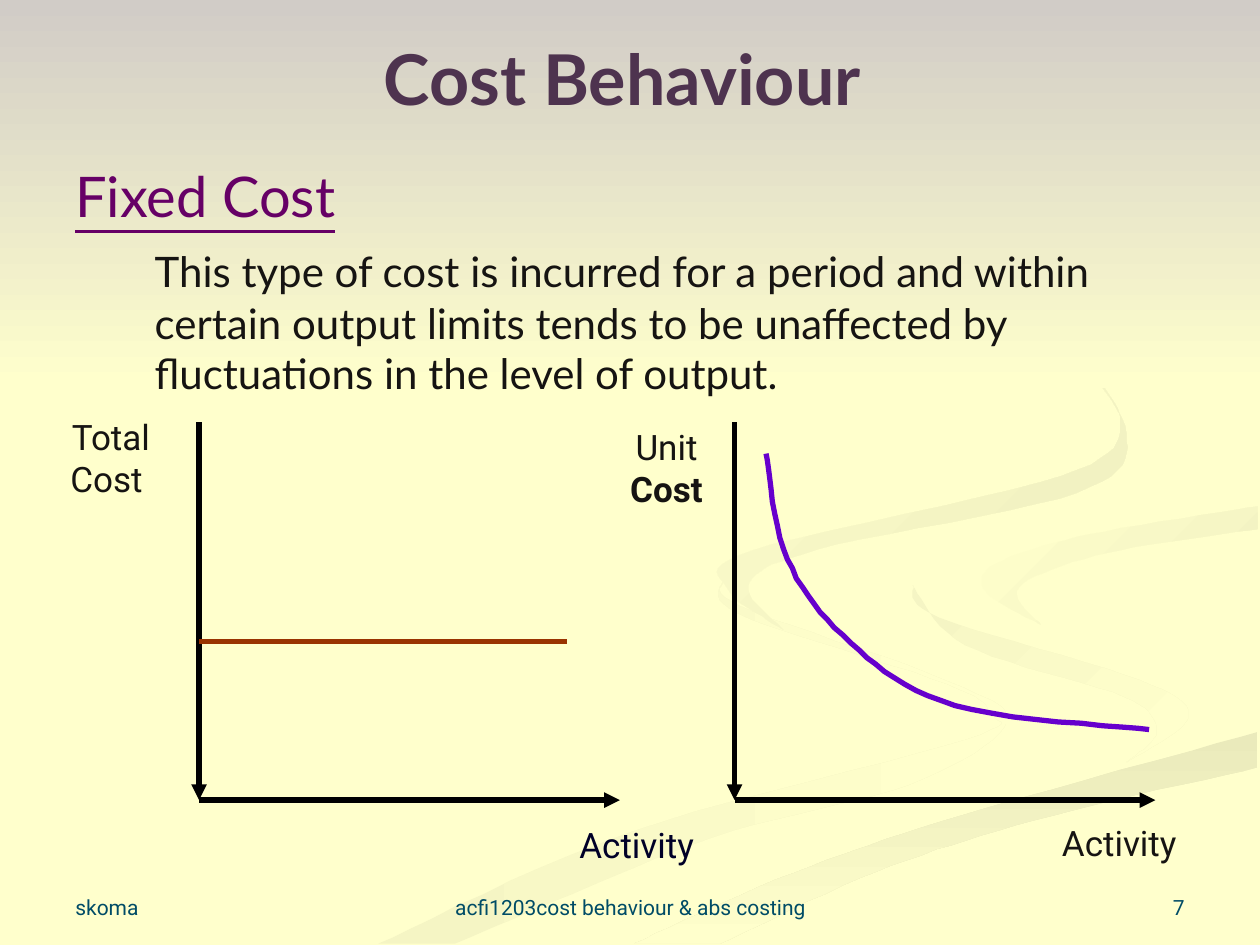
from pptx import Presentation
from pptx.dml.color import RGBColor
from pptx.enum.shapes import MSO_CONNECTOR, MSO_SHAPE
from pptx.enum.text import MSO_ANCHOR, PP_ALIGN
from pptx.oxml.xmlchemy import OxmlElement
from pptx.util import Pt

SCALE = 9144
STRAIGHT = MSO_CONNECTOR.STRAIGHT
RECTANGLE = MSO_SHAPE.RECTANGLE
LEFT, CENTER, RIGHT = PP_ALIGN.LEFT, PP_ALIGN.CENTER, PP_ALIGN.RIGHT
TOP, MIDDLE, BOTTOM = MSO_ANCHOR.TOP, MSO_ANCHOR.MIDDLE, MSO_ANCHOR.BOTTOM

CREAM = RGBColor(0xFF, 0xFF, 0xCC)
GREY = RGBColor(0xD1, 0xCC, 0xC7)
SAND = RGBColor(0xF5, 0xF5, 0xC4)
DARK_SAND = RGBColor(0xEA, 0xEA, 0xBB)
PALE_SAND = RGBColor(0xF1, 0xF1, 0xC1)
MID_SAND = RGBColor(0xED, 0xED, 0xBE)
PLUM = RGBColor(0x4E, 0x33, 0x4F)
PURPLE = RGBColor(0x66, 0x00, 0x66)
INK = RGBColor(0x16, 0x14, 0x12)
NAVY = RGBColor(0x00, 0x00, 0x28)
TEAL = RGBColor(0x00, 0x4C, 0x66)
BLACK = RGBColor(0x00, 0x00, 0x00)
BROWN = RGBColor(0x99, 0x33, 0x00)
VIOLET = RGBColor(0x66, 0x00, 0xCC)

TITLE = {"name": "Lato", "size": Pt(40), "bold": True}
HEADING = {"name": "Lato", "size": Pt(32), "underline": True}
TAB = {"name": "Lato", "size": Pt(28)}
BODY = {"name": "Lato", "size": Pt(24)}
LABEL = {"name": "Roboto", "size": Pt(20)}
BOLD_LABEL = {**LABEL, "bold": True}
FOOTER = {"name": "Roboto", "size": Pt(12)}

RIBBONS = [
    (CREAM, SAND, 0,
     [(300, 749), (499, 661), (767, 587), (785, 566), (752, 543), (586, 487), (575, 459)],
     [(575, 459), (587, 481), (745, 538), (799, 573), (721, 623), (564, 665), (361, 749)]),
    (CREAM, SAND, 45,
     [(724, 464), (745, 490), (905, 540), (943, 570), (894, 605)],
     [(894, 605), (918, 581), (892, 553), (766, 512), (724, 464)]),
    (DARK_SAND, CREAM, 90,
     [(503, 749), (630, 693), (764, 647), (998, 581)],
     [(998, 609), (821, 651), (695, 692), (571, 749)]),
    (PALE_SAND, CREAM, 45,
     [(826, 496), (782, 469), (791, 447), (865, 424), (998, 402)],
     [(998, 420), (878, 439), (809, 466), (826, 496)]),
    (MID_SAND, CREAM, 45,
     [(762, 233), (843, 275), (894, 344), (855, 391), (649, 436), (594, 465), (622, 500)],
     [(622, 500), (578, 468), (597, 437), (842, 378), (889, 335), (846, 279), (762, 233)]),
]
UNIT_COST_CURVE = [(25, 25), (42, 109), (92, 175), (175, 225), (329, 244)]


def px(*lengths):
    """Turn px lengths into whole EMU."""
    return [round(length * SCALE) for length in lengths]


def add_runs(paragraph, runs):
    """Append (text, format, colour) runs to a paragraph."""
    for text, font_format, colour in runs:
        run = paragraph.add_run()
        run.text = text
        for name, value in font_format.items():
            setattr(run.font, name, value)
        run.font.color.rgb = colour


def add_text(slide, box, runs, alignment=LEFT, anchor=TOP):
    """Place a wrapped text box and return its text frame."""
    frame = slide.shapes.add_textbox(*px(*box)).text_frame
    frame.word_wrap = True
    frame.vertical_anchor = anchor
    frame.paragraphs[0].alignment = alignment
    add_runs(frame.paragraphs[0], runs)
    return frame


def add_line(slide, start, end, colour, arrow=False):
    """Draw a straight line, with an arrowhead at its end if asked."""
    connector = slide.shapes.add_connector(STRAIGHT, *px(*start, *end))
    connector.line.color.rgb = colour
    connector.line.width = Pt(3)
    if arrow:
        head = OxmlElement("a:tailEnd")
        head.set("type", "triangle")
        connector.line._get_or_add_ln().append(head)
    connector._element.spPr.append(OxmlElement("a:effectLst"))


def smooth(knots, steps=10):
    """Return points on a smooth curve through the knots."""
    padded = [knots[0], *knots, knots[-1]]
    points = [knots[0]]
    for before, start, end, after in zip(padded, padded[1:], padded[2:], padded[3:]):
        for step in range(1, steps + 1):
            t = step / steps
            points.append(tuple(
                b + ((c - a) * t + (2 * a - 5 * b + 4 * c - d) * t ** 2
                     + (3 * b - a - 3 * c + d) * t ** 3) / 2
                for a, b, c, d in zip(before, start, end, after)))
    return points


def add_outline(slide, origin, points, close):
    """Build a freeform through px points measured from an origin."""
    left, top = origin
    placed = [(left + x, top + y) for x, y in points]
    builder = slide.shapes.build_freeform(*placed[0], scale=SCALE)
    builder.add_line_segments(placed[1:], close=close)
    shape = builder.convert_to_shape()
    shape.shadow.inherit = False
    return shape


def paint_gradient(shape, first, last, angle):
    """Fill a borderless shape with a gradient at a clockwise angle."""
    shape.line.fill.background()
    shape.fill.gradient()
    shape.fill.gradient_angle = (360 - angle) % 360
    for stop, colour in zip(shape.fill.gradient_stops, (first, last)):
        stop.color.rgb = colour


def draw_background(slide, box):
    """Paint the cream page, the ribbons and the grey band at the top."""
    slide.background.fill.solid()
    slide.background.fill.fore_color.rgb = CREAM
    for first, last, angle, edge, return_edge in RIBBONS:
        points = smooth(edge) + smooth(return_edge)
        ribbon = add_outline(slide, box[:2], points, True)
        if angle == 90:
            paint_gradient(ribbon, first, last, angle)
        else:
            paint_gradient(ribbon, last, first, angle)
    band = slide.shapes.add_shape(RECTANGLE, *px(*box))
    band.shadow.inherit = False
    paint_gradient(band, GREY, CREAM, 90)


def draw_body(slide, box):
    """Write the heading and the definition with a hanging indent."""
    frame = add_text(slide, box, [("Fixed Cost", HEADING, PURPLE)])
    definition = frame.add_paragraph()
    definition.space_before = Pt(5.6)
    add_runs(definition, [("\t", TAB, INK), (
        "This type of cost is incurred for a period and within certain output limits "
        "tends to be unaffected by fluctuations in the level of output.", BODY, INK)])
    for paragraph in frame.paragraphs:
        properties = paragraph._p.get_or_add_pPr()
        properties.set("marL", str(63 * SCALE))
        properties.set("indent", str(-63 * SCALE))


def draw_graph(slide, box, cost_runs, cost_offset, activity_offset, activity_colour):
    """Draw two axes with their labels."""
    left, top, width, height = box
    base = top + height
    add_line(slide, (left, top), (left, base), BLACK, True)
    add_line(slide, (left, base), (left + width, base), BLACK, True)
    add_text(slide, (left + cost_offset[0], top + cost_offset[1], 92, 76), cost_runs, CENTER)
    add_text(slide, (left + activity_offset[0], base + activity_offset[1], 133, 43),
             [("Activity", LABEL, activity_colour)])


def draw_total_cost(slide, box):
    """Draw the flat total cost graph."""
    left, top = box[:2]
    draw_graph(slide, box, [("Total Cost ", LABEL, INK)], (-116, -10), (292, 14), NAVY)
    add_line(slide, (left, top + 174), (left + 292, top + 174), BROWN)


def draw_unit_cost(slide, box):
    """Draw the falling unit cost graph."""
    draw_graph(slide, box, [("Unit ", LABEL, INK), ("Cost", BOLD_LABEL, INK)],
               (-100, -2), (250, 12), INK)
    curve = add_outline(slide, box[:2], smooth(UNIT_COST_CURVE), False)
    curve.fill.background()
    curve.line.color.rgb = VIOLET
    curve.line.width = Pt(3)


def draw_footer(slide, box):
    """Write author, course and slide number along the bottom."""
    left, top, width, height = box
    for text, offset, part_width, alignment in (
            ("skoma", 0, 233, LEFT),
            ("acfi1203cost behaviour & abs costing", 292, 317, CENTER),
            ("7", width - 233, 233, RIGHT)):
        add_text(slide, (left + offset, top, part_width, height),
                 [(text, FOOTER, TEAL)], alignment, BOTTOM)


def main():
    """Build and save the slide."""
    presentation = Presentation()
    presentation.slide_width, presentation.slide_height = px(1000, 750)
    slide = presentation.slides.add_slide(presentation.slide_layouts[6])
    draw_background(slide, (0, 0, 1000, 308))
    add_text(slide, (50, 30, 900, 63), [("Cost Behaviour ", TITLE, PLUM)], CENTER, MIDDLE)
    draw_body(slide, (50, 123, 900, 547))
    draw_total_cost(slide, (158, 335, 334, 300))
    draw_unit_cost(slide, (583, 335, 334, 300))
    draw_footer(slide, (50, 683, 900, 52))
    presentation.save("out.pptx")


if __name__ == "__main__":
    main()
